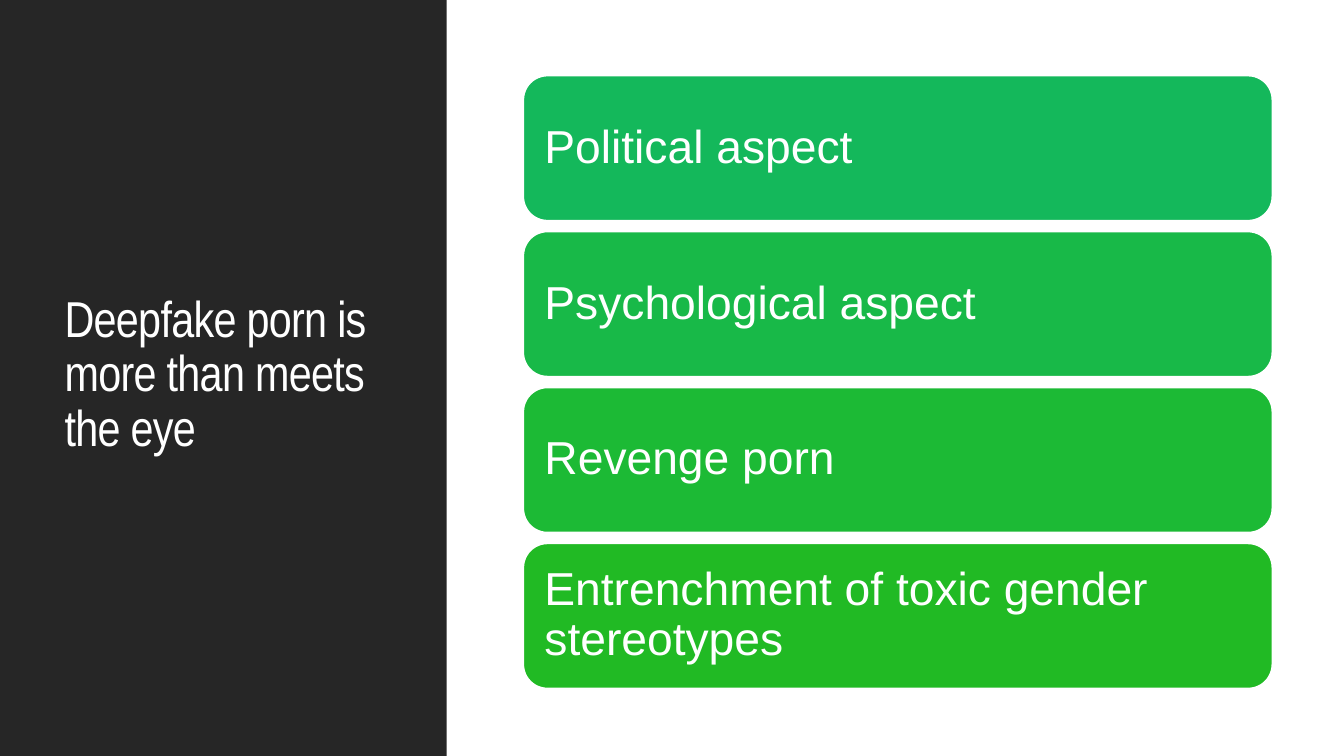
from pptx import Presentation
from pptx.dml.color import RGBColor
from pptx.enum.shapes import MSO_SHAPE
from pptx.enum.text import MSO_ANCHOR, MSO_AUTO_SIZE, PP_ALIGN
from pptx.util import Inches, Pt

TITLE = "Deepfake porn is more than meets the eye"
ASPECTS = [
    ("Political aspect", "jade"),
    ("Psychological aspect", "emerald"),
    ("Revenge porn", "green"),
    ("Entrenchment of toxic gender stereotypes", "leaf"),
]
COLORS = {
    "white": "FFFFFF",
    "charcoal": "262626",
    "jade": "14B85B",
    "emerald": "18B948",
    "green": "1CBA35",
    "leaf": "21BA24",
}
WIDTH, HEIGHT = 13.33, 7.5
PANEL_WIDTH = 4.43
CARD_LEFT, CARD_TOP, CARD_WIDTH, CARD_HEIGHT = 5.19, 0.75, 7.43, 1.44
CARD_STEP = 1.547


def color(name):
    return RGBColor.from_string(COLORS[name])


def write(shape, text, font="Arial", size=33, inset=0.14, spacing=0):
    frame = shape.text_frame
    frame.word_wrap = True
    frame.auto_size = MSO_AUTO_SIZE.NONE
    frame.vertical_anchor = MSO_ANCHOR.MIDDLE
    frame.margin_left = frame.margin_right = Inches(inset)
    frame.margin_top = frame.margin_bottom = Inches(inset)
    para = frame.paragraphs[0]
    para.alignment = PP_ALIGN.LEFT
    para.line_spacing = 0.9
    para.space_before = Pt(0)
    span = para.add_run()
    span.text = text
    span.font.name = font
    span.font.size = Pt(size)
    span.font.color.rgb = color("white")
    if spacing:
        span.font._element.set("spc", str(int(spacing * 100)))


def add_block(page, kind, left, top, width, height, fill, outline=None):
    block = page.shapes.add_shape(
        kind, Inches(left), Inches(top), Inches(width), Inches(height))
    block.shadow.inherit = False
    block.fill.solid()
    block.fill.fore_color.rgb = color(fill)
    if outline:
        block.line.color.rgb = color(outline)
        block.line.width = Pt(1.25)
    else:
        block.line.fill.background()
    return block


def main():
    deck = Presentation()
    deck.slide_width, deck.slide_height = Inches(WIDTH), Inches(HEIGHT)
    page = deck.slides.add_slide(deck.slide_layouts[5])
    page.background.fill.solid()
    page.background.fill.fore_color.rgb = color("white")

    panel = add_block(page, MSO_SHAPE.RECTANGLE, 0, 0, PANEL_WIDTH, HEIGHT, "charcoal")
    title = page.shapes.title
    title.left, title.top = Inches(0.54), Inches(0.57)
    title.width, title.height = Inches(3.37), Inches(6.31)
    write(title, TITLE, font="Arial Narrow", size=36, inset=0.1, spacing=-0.5)
    panel.element.addnext(title.element)

    for row, (text, fill) in enumerate(ASPECTS):
        card = add_block(page, MSO_SHAPE.ROUNDED_RECTANGLE, CARD_LEFT,
                         CARD_TOP + row * CARD_STEP, CARD_WIDTH, CARD_HEIGHT,
                         fill, outline="white")
        write(card, text)

    deck.save("out.pptx")


if __name__ == "__main__":
    main()
